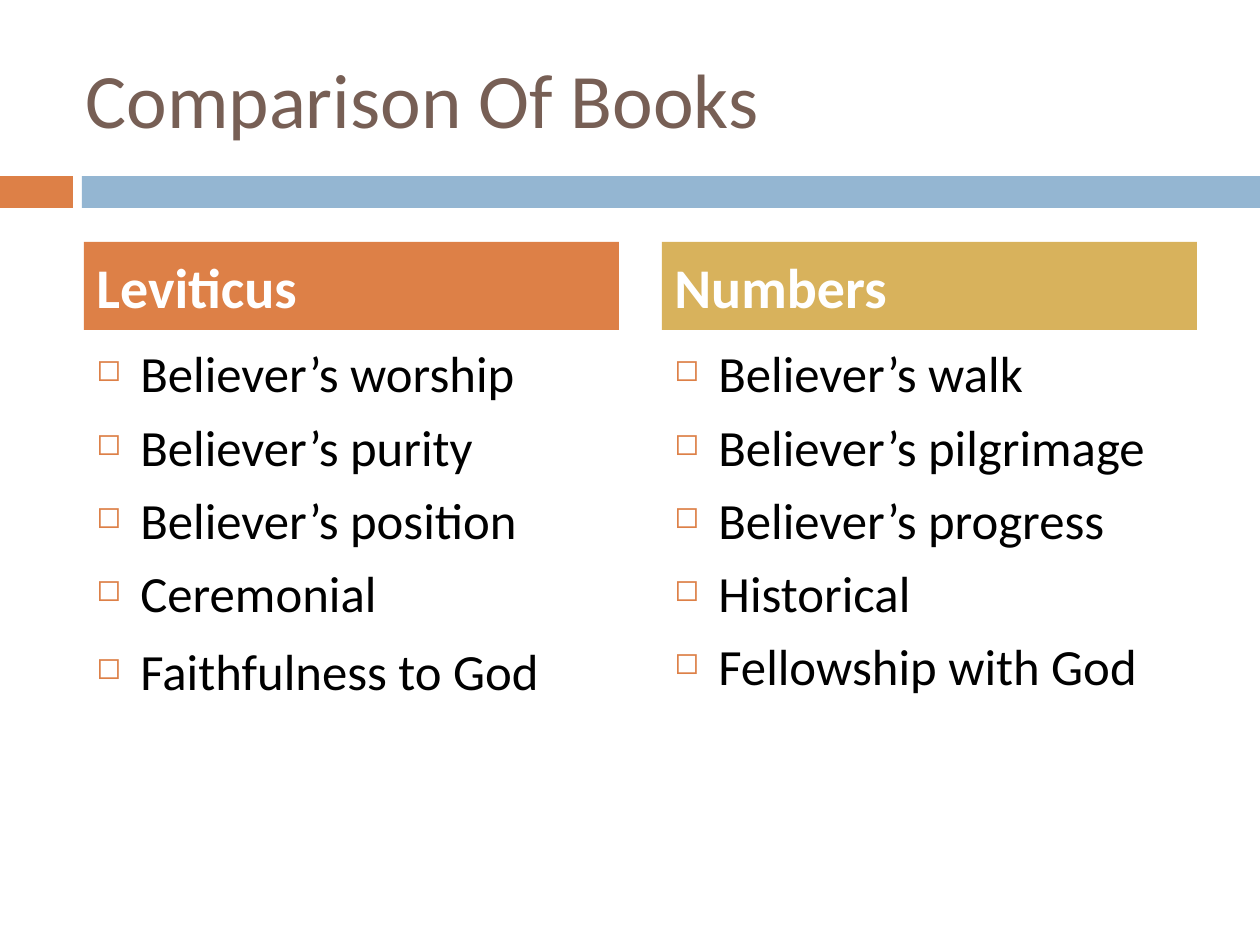
from lxml import etree
from pptx import Presentation
from pptx.dml.color import RGBColor
from pptx.enum.shapes import MSO_SHAPE
from pptx.enum.text import MSO_ANCHOR, PP_ALIGN
from pptx.oxml.ns import qn
from pptx.util import Emu, Pt

RECT = MSO_SHAPE.RECTANGLE
MIDDLE, TOP = MSO_ANCHOR.MIDDLE, MSO_ANCHOR.TOP
LEFT = PP_ALIGN.LEFT

TITLE = "Comparison Of Books"
COLUMNS = [
    ("Leviticus", "orange", [
        ("Believer’s worship", 7), ("Believer’s purity", 7),
        ("Believer’s position", 7), ("Ceremonial", 7),
        ("Faithfulness to God", 10)]),
    ("Numbers", "gold", [
        ("Believer’s walk", 7), ("Believer’s pilgrimage", 7),
        ("Believer’s progress", 7), ("Historical", 7),
        ("Fellowship with God", 7)]),
]
COLORS = {"orange": "DD8047", "blue": "94B6D2", "gold": "D8B25C",
          "brown": "775F55", "black": "000000", "white": "FFFFFF"}
BANDS = [(0, 73, "orange"), (82, 1178, "blue")]
BAND_TOP, BAND_H = 176, 32
COL_LEFT, COL_W, COL_GAP = 84, 535, 43
HEAD_TOP, HEAD_H = 242, 88
LIST_TOP, LIST_H = 336, 494
INDENT = 44
SCALE = 914400 // 126


def px(*values):
    return [Emu(v * SCALE) for v in values]


def color(name):
    return RGBColor.from_string(COLORS[name])


def add_rect(s, x, y, w, h, fill):
    sp = s.shapes.add_shape(RECT, *px(x, y, w, h))
    sp.shadow.inherit = False
    sp.fill.solid()
    sp.fill.fore_color.rgb = color(fill)
    sp.line.fill.background()
    return sp


def format_paragraph(p, text, size, ink, bold=False, before=0):
    p.text = text
    p.alignment = LEFT
    p.space_before = Pt(before)
    p.font.name, p.font.size, p.font.bold = "Calibri", Pt(size), bold
    p.font.color.rgb = color(ink)


def add_bullet(p):
    pPr = p._p.get_or_add_pPr()
    pPr.set("marL", str(INDENT * SCALE))
    pPr.set("indent", str(-INDENT * SCALE))
    marks = [etree.Element(qn(tag)) for tag in ("a:buClr", "a:buSzPct", "a:buChar")]
    etree.SubElement(marks[0], qn("a:srgbClr")).set("val", COLORS["orange"])
    marks[1].set("val", "60000")
    marks[2].set("char", "◻")
    at = list(pPr).index(pPr.find(qn("a:defRPr")))
    pPr[at:at] = marks


def add_column(s, x, heading, fill, items):
    tf = s.shapes.add_textbox(*px(x, LIST_TOP, COL_W, LIST_H)).text_frame
    tf.word_wrap = True
    tf.vertical_anchor = TOP
    for i, (item, before) in enumerate(items):
        p = tf.add_paragraph() if i else tf.paragraphs[0]
        format_paragraph(p, item, 29, "black", before=before)
        add_bullet(p)
    tf = add_rect(s, x, HEAD_TOP, COL_W, HEAD_H, fill).text_frame
    tf.vertical_anchor = MIDDLE
    format_paragraph(tf.paragraphs[0], heading, 32, "white", True, 7)


def main():
    prs = Presentation()
    prs.slide_width, prs.slide_height = px(1260, 945)
    s = prs.slides.add_slide(prs.slide_layouts[5])
    for x, w, fill in BANDS:
        add_rect(s, x, BAND_TOP, w, BAND_H, fill)
    title = s.shapes.title
    title.left, title.top, title.width, title.height = px(73, 38, 1124, 120)
    title.text_frame.vertical_anchor = MIDDLE
    format_paragraph(title.text_frame.paragraphs[0], TITLE, 44, "brown")
    for i, column in enumerate(COLUMNS):
        add_column(s, COL_LEFT + i * (COL_W + COL_GAP), *column)
    prs.save("out.pptx")


if __name__ == "__main__":
    main()
